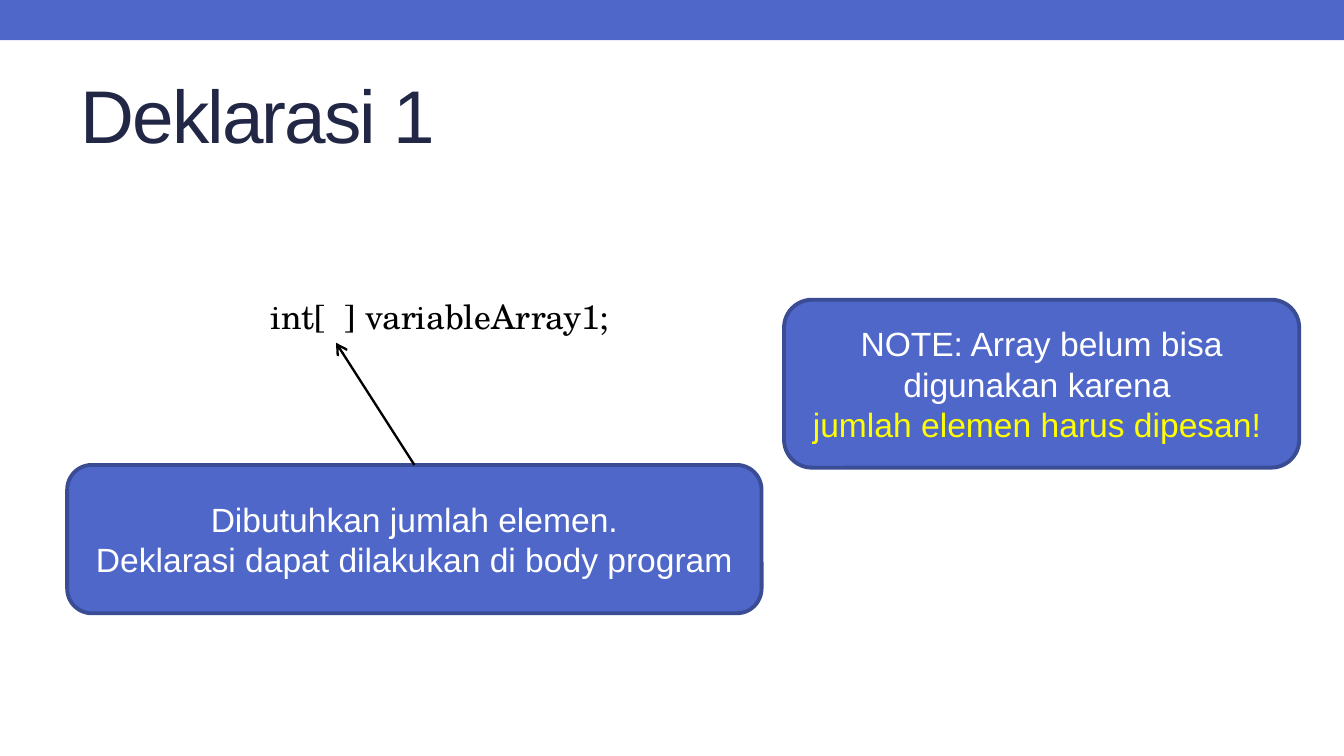
"""Build the slide that explains the first way to declare an array."""
from dataclasses import dataclass

from lxml import etree
from pptx import Presentation
from pptx.dml.color import RGBColor
from pptx.enum.shapes import MSO_CONNECTOR, MSO_SHAPE
from pptx.enum.text import MSO_ANCHOR, PP_ALIGN
from pptx.oxml.ns import qn
from pptx.slide import Slide
from pptx.text.text import TextFrame
from pptx.util import Inches, Length, Pt

BLUE = RGBColor(0x4E, 0x67, 0xC8)
BLUE_EDGE = RGBColor(0x3A, 0x4C, 0x94)
NAVY = RGBColor(0x21, 0x27, 0x45)
BLACK = RGBColor(0x00, 0x00, 0x00)
WHITE = RGBColor(0xFF, 0xFF, 0xFF)
YELLOW = RGBColor(0xFF, 0xFF, 0x00)

RECTANGLE = MSO_SHAPE.RECTANGLE
ROUNDED = MSO_SHAPE.ROUNDED_RECTANGLE
STRAIGHT = MSO_CONNECTOR.STRAIGHT
MIDDLE, TOP = MSO_ANCHOR.MIDDLE, MSO_ANCHOR.TOP
CENTER, LEFT = PP_ALIGN.CENTER, PP_ALIGN.LEFT

SANS = "Arial"
SERIF = "TeX Gyre Schola"
WIDTH = Inches(10)
HEIGHT = Length(WIDTH * 9 // 16)
COLUMNS = 100
CELL = WIDTH / COLUMNS


@dataclass(frozen=True)
class Area:
    """A rectangle measured in square grid cells."""
    column: float
    row: float
    columns: float
    rows: float

    def lengths(self) -> list[Length]:
        """Return left, top, width and height as slide lengths."""
        return [cells(n) for n in (self.column, self.row, self.columns, self.rows)]


@dataclass(frozen=True)
class Line:
    """One paragraph of text and its style."""
    words: str
    color: RGBColor = WHITE
    size: float = 18
    font: str = SANS
    spacing: int = 0


@dataclass(frozen=True)
class Callout:
    """A rounded box with centred lines."""
    area: Area
    lines: tuple[Line, ...]


NOTE = Callout(Area(58.34, 22.3, 38.34, 12.5), (
    Line("NOTE: Array belum bisa digunakan karena "),
    Line("jumlah elemen harus dipesan! ", YELLOW),
))
EXPLANATION = Callout(Area(5, 34.6, 51.67, 11.04), (
    Line("Dibutuhkan jumlah elemen."),
    Line("Deklarasi dapat dilakukan di body program"),
))
TITLE = Line("Deklarasi 1", NAVY, 40, spacing=-100)
DECLARATION = Line("int[  ] variableArray1;", BLACK, font=SERIF)


def cells(count: float) -> Length:
    """Convert grid cells to a slide length."""
    return Length(round(count * CELL))


def write_lines(frame: TextFrame, lines: tuple[Line, ...], align: PP_ALIGN) -> None:
    """Write one styled paragraph per line."""
    frame.text = "\n".join(line.words for line in lines)
    for paragraph, line in zip(frame.paragraphs, lines):
        paragraph.alignment = align
        for run in paragraph.runs:
            run.font.name = line.font
            run.font.size = Pt(line.size)
            run.font.color.rgb = line.color
            if line.spacing:
                run.font._element.set("spc", str(line.spacing))


def draw_band(slide: Slide, area: Area) -> None:
    """Draw the plain band along the top edge."""
    band = slide.shapes.add_shape(RECTANGLE, *area.lengths())
    band.shadow.inherit = False
    band.fill.solid()
    band.fill.fore_color.rgb = BLUE
    band.line.fill.background()


def draw_text(slide: Slide, area: Area, line: Line, anchor: MSO_ANCHOR, wrap: bool) -> None:
    """Draw a left-aligned text box."""
    frame = slide.shapes.add_textbox(*area.lengths()).text_frame
    frame.word_wrap = wrap
    frame.vertical_anchor = anchor
    write_lines(frame, (line,), LEFT)


def draw_callout(slide: Slide, callout: Callout) -> None:
    """Draw a rounded box with its lines."""
    box = slide.shapes.add_shape(ROUNDED, *callout.area.lengths())
    box.shadow.inherit = False
    box.fill.solid()
    box.fill.fore_color.rgb = BLUE
    box.line.color.rgb = BLUE_EDGE
    box.line.width = Pt(2.08)
    box.text_frame.word_wrap = True
    box.text_frame.vertical_anchor = MIDDLE
    write_lines(box.text_frame, callout.lines, CENTER)


def draw_arrow(slide: Slide, start: tuple[float, float], end: tuple[float, float]) -> None:
    """Draw a straight arrow between two grid points."""
    arrow = slide.shapes.add_connector(STRAIGHT, *(cells(n) for n in start + end))
    arrow.line.color.rgb = BLACK
    arrow.line.width = Pt(1.25)
    etree.SubElement(arrow.line._get_or_add_ln(), qn("a:tailEnd"), type="arrow")
    etree.SubElement(arrow._element.spPr, qn("a:effectLst"))


def main() -> None:
    """Build and save the slide."""
    deck = Presentation()
    deck.slide_width, deck.slide_height = WIDTH, HEIGHT
    slide = deck.slides.add_slide(deck.slide_layouts[6])
    draw_band(slide, Area(0, 0, COLUMNS, 3))
    draw_text(slide, Area(5, 4.4, 90, 8.1), TITLE, MIDDLE, True)
    draw_text(slide, Area(19.15, 21.5, 27.6, 4), DECLARATION, TOP, False)
    for callout in (NOTE, EXPLANATION):
        draw_callout(slide, callout)
    box = EXPLANATION.area
    draw_arrow(slide, (box.column + box.columns / 2, box.row), (25, 25.5))
    deck.save("out.pptx")


if __name__ == "__main__":
    main()
